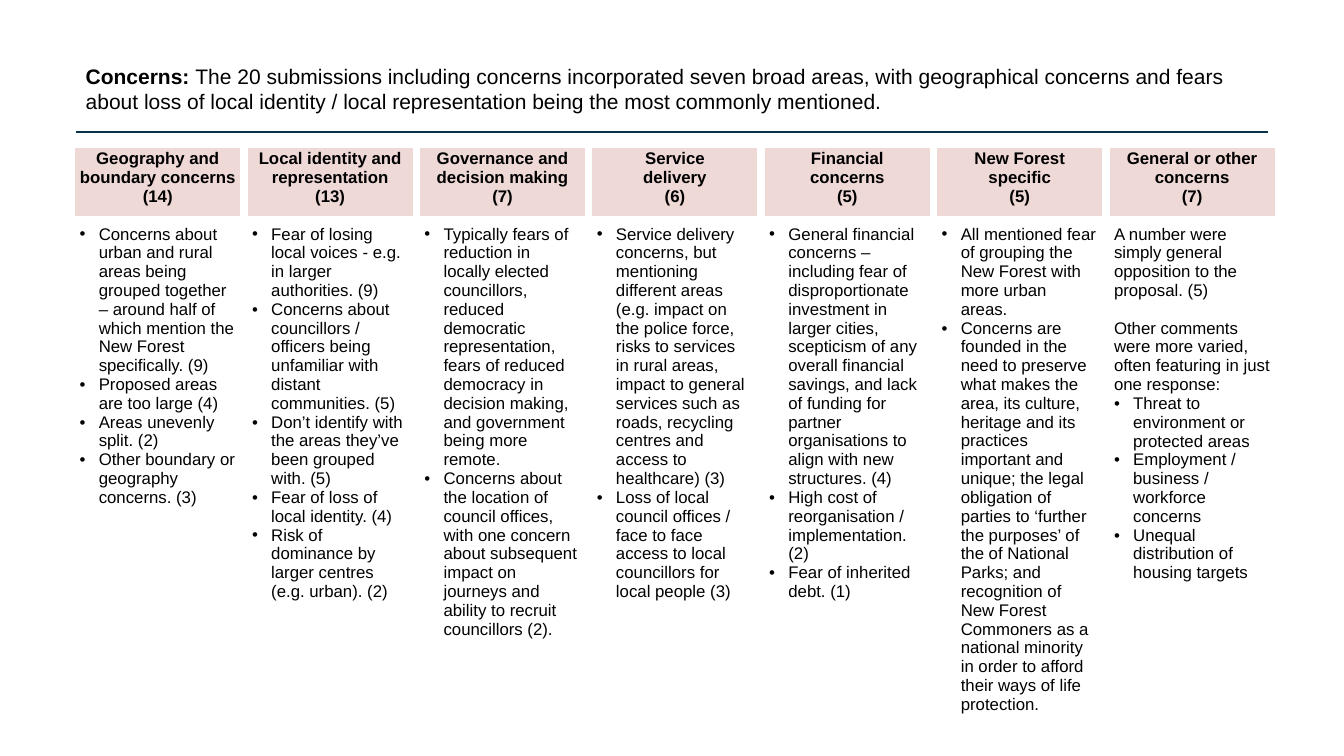
from dataclasses import dataclass

from lxml import etree
from pptx import Presentation
from pptx.dml.color import RGBColor
from pptx.enum.shapes import MSO_CONNECTOR
from pptx.enum.text import MSO_ANCHOR, MSO_AUTO_SIZE, PP_ALIGN
from pptx.oxml.ns import qn
from pptx.util import Inches, Pt

STRAIGHT = MSO_CONNECTOR.STRAIGHT
BOTTOM, TOP = MSO_ANCHOR.BOTTOM, MSO_ANCHOR.TOP
LEFT, CENTER = PP_ALIGN.LEFT, PP_ALIGN.CENTER
NO_AUTOFIT = MSO_AUTO_SIZE.NONE
TITLE_ONLY = 5


@dataclass(frozen=True)
class Theme:
    font: str = "Arial"
    title_size: float = 15
    body_size: float = 12
    text: str = "000000"
    rule: str = "08324B"
    header_fill: str = "EFD9D7"
    body_fill: str = "FFFFFF"
    border: str = "FFFFFF"
    border_width: float = 6
    rule_width: float = 1.25


THEME = Theme()

# Layout, in inches
SLIDE_WIDTH, SLIDE_HEIGHT = 13.33, 7.5
TITLE_BOX = (0.75, 0.35, 11.83, 0.83)
RULE_Y = 1.31
TABLE_LEFT, TABLE_TOP, COLUMN_WIDTH = 0.71, 1.43, 1.71
ROW_HEIGHTS = (0.75, 4.46)
INSET_X, INSET_Y, NARROW_INSET = 0.08, 0.05, 0.04
BULLET_INDENT = 0.19
PARAGRAPH_GAP = 13.5

TITLE_LEAD = "Concerns: "
TITLE_TEXT = (
    "The 20 submissions including concerns incorporated seven broad areas, with "
    "geographical concerns and fears about loss of local identity / local "
    "representation being the most commonly mentioned."
)

# Each area: heading lines, introductory paragraphs, bullets
AREAS = [
    (["Geography and boundary concerns", "(14)"], [], [
        "Concerns about urban and rural areas being grouped together – around half "
        "of which mention the New Forest specifically. (9)",
        "Proposed areas are too large (4)",
        "Areas unevenly split. (2)",
        "Other boundary or geography concerns. (3)",
    ]),
    (["Local identity and representation", "(13)"], [], [
        "Fear of losing local voices - e.g. in larger authorities. (9)",
        "Concerns about councillors / officers being unfamiliar with distant "
        "communities. (5)",
        "Don’t identify with the areas they’ve been grouped with. (5)",
        "Fear of loss of local identity. (4)",
        "Risk of dominance by larger centres (e.g. urban). (2)",
    ]),
    (["Governance and decision making", "(7)"], [], [
        "Typically fears of reduction in locally elected councillors, reduced "
        "democratic representation, fears of reduced democracy in decision making, "
        "and government being more remote.",
        "Concerns about the location of council offices, with one concern about "
        "subsequent impact on journeys and ability to recruit councillors (2).",
    ]),
    (["Service", "delivery", "(6)"], [], [
        "Service delivery concerns, but mentioning different areas (e.g. impact on "
        "the police force, risks to services in rural areas, impact to general "
        "services such as roads, recycling centres and access to healthcare) (3)",
        "Loss of local council offices / face to face access to local councillors "
        "for local people (3)",
    ]),
    (["Financial", "concerns", "(5)"], [], [
        "General financial concerns – including fear of disproportionate investment "
        "in larger cities, scepticism of any overall financial savings, and lack of "
        "funding for partner organisations to align with new structures. (4)",
        "High cost of reorganisation / implementation. (2)",
        "Fear of inherited debt. (1)",
    ]),
    (["New Forest specific", "(5)"], [], [
        "All mentioned fear of grouping the New Forest with more urban areas.",
        "Concerns are founded in the need to preserve what makes the area, its "
        "culture, heritage and its practices important and unique; the legal "
        "obligation of parties to ‘further the purposes’ of the of National Parks; "
        "and recognition of New Forest Commoners as a national minority in order to "
        "afford their ways of life protection.",
    ]),
    (["General or other concerns", "(7)"], [
        "A number were simply general opposition to the proposal. (5)",
        "Other comments were more varied, often featuring in just one response:",
    ], [
        "Threat to environment or protected areas",
        "Employment / business / workforce concerns",
        "Unequal distribution of housing targets",
    ]),
]


def color(value):
    return RGBColor.from_string(value)


def format_paragraph(paragraph, size, bold=False, alignment=LEFT):
    paragraph.alignment = alignment
    font = paragraph.font
    font.name, font.size, font.bold = THEME.font, Pt(size), bold
    font.color.rgb = color(THEME.text)


def add_bullet(paragraph):
    properties = paragraph._p.get_or_add_pPr()
    properties.set("marL", str(Inches(BULLET_INDENT)))
    properties.set("indent", str(-Inches(BULLET_INDENT)))
    etree.SubElement(properties, qn("a:buFont"), typeface=THEME.font)
    etree.SubElement(properties, qn("a:buChar"), char="•")


def add_borders(cell):
    properties = cell._tc.get_or_add_tcPr()
    for side in ("lnL", "lnR", "lnT", "lnB"):
        line = etree.SubElement(properties, qn(f"a:{side}"), w=str(Pt(THEME.border_width)))
        fill = etree.SubElement(line, qn("a:solidFill"))
        etree.SubElement(fill, qn("a:srgbClr"), val=THEME.border)


def format_cell(cell, fill, right_inset=INSET_X):
    add_borders(cell)
    cell.fill.solid()
    cell.fill.fore_color.rgb = color(fill)
    cell.vertical_anchor = TOP
    cell.margin_left, cell.margin_right = Inches(INSET_X), Inches(right_inset)
    cell.margin_top = cell.margin_bottom = Inches(INSET_Y)


def fill_cell(cell, texts, first_bullet=None, bold=False, alignment=LEFT):
    """Write one paragraph per text; those from first_bullet on are bulleted."""
    frame = cell.text_frame
    frame.word_wrap = True
    for index, text in enumerate(texts):
        paragraph = frame.paragraphs[0] if index == 0 else frame.add_paragraph()
        paragraph.text = text
        if first_bullet is not None:
            if index >= first_bullet:
                add_bullet(paragraph)
            elif index > 0:
                paragraph.space_before = Pt(PARAGRAPH_GAP)
        format_paragraph(paragraph, THEME.body_size, bold, alignment)


def add_title(slide):
    title = slide.shapes.title
    title.left, title.top, title.width, title.height = map(Inches, TITLE_BOX)
    frame = title.text_frame
    frame.word_wrap, frame.auto_size = True, NO_AUTOFIT
    frame.vertical_anchor = BOTTOM
    paragraph = frame.paragraphs[0]
    format_paragraph(paragraph, THEME.title_size)
    for text, bold in ((TITLE_LEAD, True), (TITLE_TEXT, False)):
        run = paragraph.add_run()
        run.text, run.font.bold = text, bold


def add_rule(slide):
    left, _, width, _ = TITLE_BOX
    rule = slide.shapes.add_connector(
        STRAIGHT, Inches(left), Inches(RULE_Y), Inches(left + width), Inches(RULE_Y))
    rule.line.color.rgb = color(THEME.rule)
    rule.line.width = Pt(THEME.rule_width)
    etree.SubElement(rule._element.spPr, qn("a:effectLst"))


def add_concerns_table(slide):
    table = slide.shapes.add_table(
        len(ROW_HEIGHTS), len(AREAS), Inches(TABLE_LEFT), Inches(TABLE_TOP),
        Inches(COLUMN_WIDTH * len(AREAS)), Inches(sum(ROW_HEIGHTS))).table
    table.first_row = table.horz_banding = False
    for row, height in zip(table.rows, ROW_HEIGHTS):
        row.height = Inches(height)
    for index, (heading, introduction, bullets) in enumerate(AREAS):
        table.columns[index].width = Inches(COLUMN_WIDTH)
        header, body = table.cell(0, index), table.cell(1, index)
        format_cell(header, THEME.header_fill)
        fill_cell(header, heading, bold=True, alignment=CENTER)
        format_cell(body, THEME.body_fill, NARROW_INSET if introduction else INSET_X)
        fill_cell(body, introduction + bullets, first_bullet=len(introduction))


def main():
    presentation = Presentation()
    presentation.slide_width = Inches(SLIDE_WIDTH)
    presentation.slide_height = Inches(SLIDE_HEIGHT)
    slide = presentation.slides.add_slide(presentation.slide_layouts[TITLE_ONLY])
    add_rule(slide)
    add_title(slide)
    add_concerns_table(slide)
    presentation.save("out.pptx")


if __name__ == "__main__":
    main()
